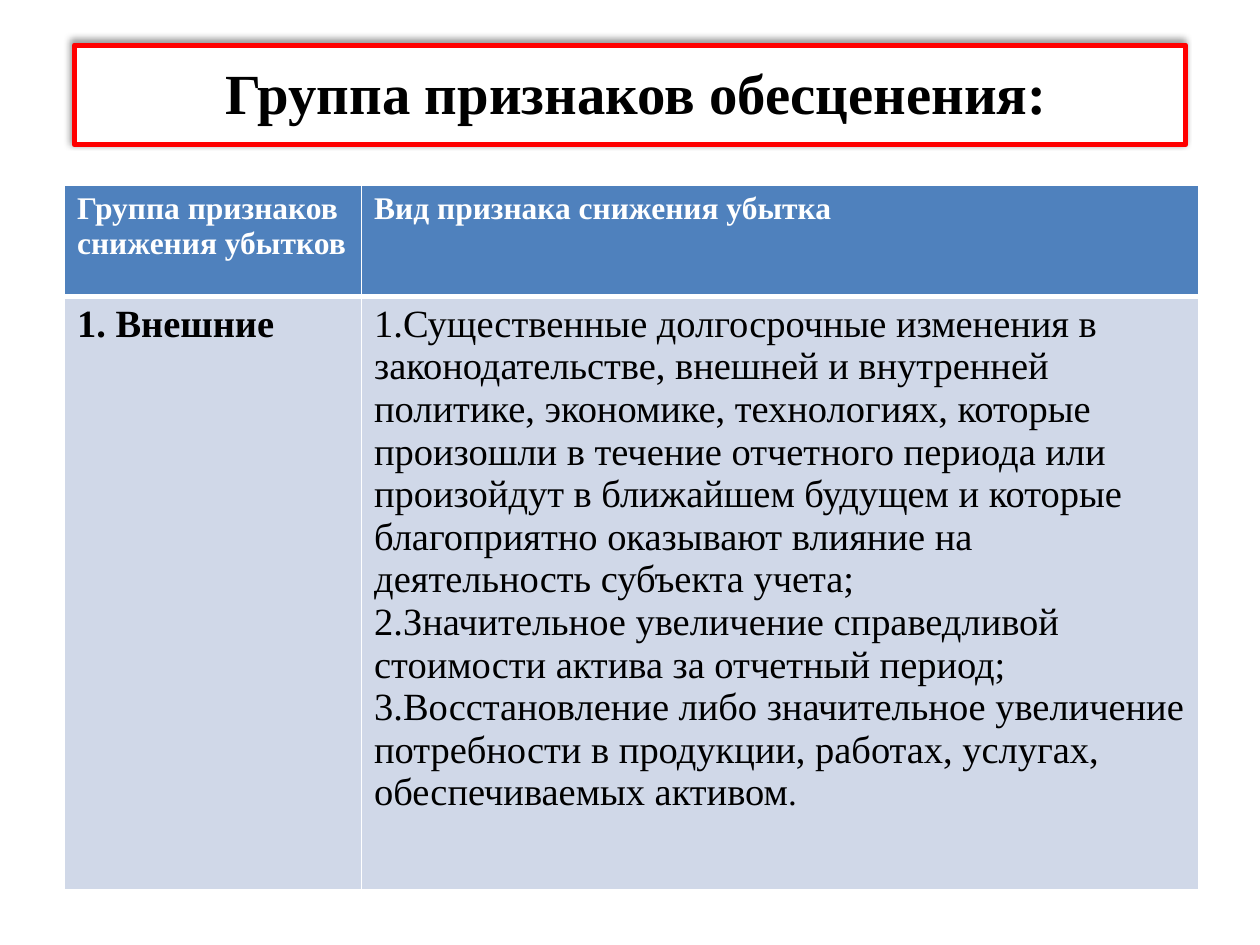
from lxml import etree
from pptx import Presentation
from pptx.dml.color import RGBColor
from pptx.enum.text import MSO_ANCHOR, PP_ALIGN
from pptx.oxml.ns import qn
from pptx.util import Cm, Pt

CENTER = PP_ALIGN.CENTER
MIDDLE = MSO_ANCHOR.MIDDLE
FONT = "Times New Roman"
COLORS = {"white": "FFFFFF", "black": "000000", "red": "FF0000",
          "head": "4F81BD", "body": "D0D8E8"}

TITLE = "Группа признаков обесценения:"
# Each cell is a list of paragraphs, each paragraph a list of (text, size, bold)
ROWS = [
    [
        [[("Группа признаков", 18, True)],
         [("снижения убытков", 18, True)]],
        [[("Вид признака снижения убытка", 18, True)]],
    ],
    [
        [[("1. Внешние", 22, True)]],
        [[("1.Существенные долгосрочные изменения в законодательстве, "
           "внешней и внутренней политике, экономике, технологиях, которые "
           "произошли в течение отчетного периода или произойдут в ближайшем "
           "будущем и которые благоприятно оказывают влияние на деятельность "
           "субъекта учета;", 22, False)],
         [("2.Значительное увеличение справедливой стоимости актива за "
           "отчетный период;", 22, False)],
         [("3.Восстановление либо значительное увеличение потребности в "
           "продукции, работах, услугах, обеспечиваемых активом", 22, False),
          (".", 20, False)]],
    ],
]
WIDTHS = [5.99, 16.87]
HEIGHTS = [2.25, 11.95]
# Fill, text colour and border widths (left, right, top, bottom) of each row
STYLES = [("head", "white", (1, 1, 1, 3)),
          ("body", "black", (1, 1, 3, 1))]


def rgb(name):
    return RGBColor.from_string(COLORS[name])


def add_run(para, text, size, bold, color):
    run = para.add_run()
    run.text = text
    font = run.font
    font.name, font.size, font.bold = FONT, Pt(size), bold
    font.color.rgb = rgb(color)


def paint(parent, color):
    fill = etree.SubElement(parent, qn("a:solidFill"))
    return etree.SubElement(fill, qn("a:srgbClr"), val=COLORS[color])


def add_shadow(shape):
    shape.shadow.inherit = False
    effects = shape._element.spPr.find(qn("a:effectLst"))
    outer = etree.SubElement(
        effects, qn("a:outerShdw"), blurRad=str(Pt(4)), dist=str(Pt(3)),
        dir=str(225 * 60000), algn="br", rotWithShape="0")
    color = etree.SubElement(outer, qn("a:srgbClr"), val=COLORS["black"])
    etree.SubElement(color, qn("a:alpha"), val="40000")


def set_borders(cell, widths):
    """Borders must come before the fill in the cell properties."""
    props = cell._tc.get_or_add_tcPr()
    for i, (side, width) in enumerate(zip("LRTB", widths)):
        line = etree.Element(qn(f"a:ln{side}"), w=str(Pt(width)))
        paint(line, "white")
        props.insert(i, line)


def add_title(slide):
    title = slide.shapes.title
    title.left, title.top = Cm(1.5), Cm(0.91)
    title.width, title.height = Cm(22.4), Cm(2.01)
    title.fill.solid()
    title.fill.fore_color.rgb = rgb("white")
    title.line.color.rgb = rgb("red")
    title.line.width = Pt(3)
    add_shadow(title)
    frame = title.text_frame
    frame.vertical_anchor = MIDDLE
    frame.margin_left, frame.margin_bottom = Cm(0.5), Cm(0.25)
    para = frame.paragraphs[0]
    para.alignment = CENTER
    add_run(para, TITLE, 32.4, True, "black")


def fill_cell(cell, paras, style):
    back, color, widths = style
    cell.fill.solid()
    cell.fill.fore_color.rgb = rgb(back)
    set_borders(cell, widths)
    frame = cell.text_frame
    for i, runs in enumerate(paras):
        para = frame.add_paragraph() if i else frame.paragraphs[0]
        for text, size, bold in runs:
            add_run(para, text, size, bold, color)


def add_signs(slide):
    table = slide.shapes.add_table(
        len(ROWS), len(WIDTHS), Cm(1.3), Cm(3.73),
        Cm(sum(WIDTHS)), Cm(sum(HEIGHTS))).table
    for col, width in zip(table.columns, WIDTHS):
        col.width = Cm(width)
    for row, height, cells, style in zip(table.rows, HEIGHTS, ROWS, STYLES):
        row.height = Cm(height)
        for cell, paras in zip(row.cells, cells):
            fill_cell(cell, paras, style)


def main():
    deck = Presentation()
    deck.slide_width, deck.slide_height = Cm(25.4), Cm(19.05)
    slide = deck.slides.add_slide(deck.slide_layouts[5])
    add_title(slide)
    add_signs(slide)
    deck.save("out.pptx")


if __name__ == "__main__":
    main()
